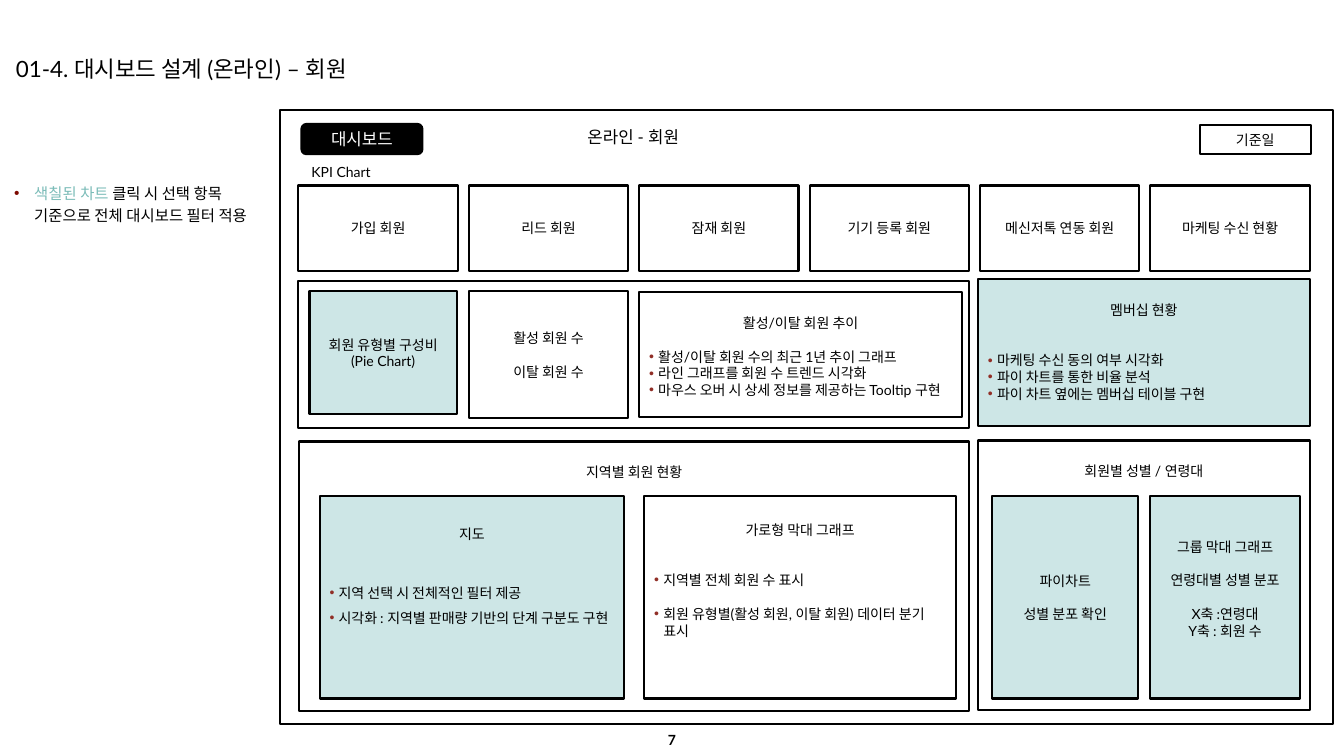
import pptx
import pptx.dml.color
import pptx.enum.shapes
import pptx.enum.text
import pptx.oxml.ns
import pptx.util
from lxml import etree

Inches = pptx.util.Inches
Pt = pptx.util.Pt
SHAPES = pptx.enum.shapes.MSO_SHAPE
ALIGN = pptx.enum.text.PP_ALIGN
ANCHOR = pptx.enum.text.MSO_ANCHOR
BLACK, WHITE, MINT, TEAL = "000000", "FFFFFF", "CDE6E6", "7BBCB8"
BULLET_RED, NOTE_RED = "912F27", "7D0900"
PANEL_TOP, PANEL_HEIGHT = 4.92, 2.01


def color(value):
    return pptx.dml.color.RGBColor.from_string(value)


def add_bullet(para, indent, tint):
    props = para._p.get_or_add_pPr()
    props.set("marL", str(Inches(indent)))
    props.set("indent", str(-Inches(indent)))
    qn = pptx.oxml.ns.qn
    holder = etree.SubElement(props, qn("a:buClr"))
    etree.SubElement(holder, qn("a:srgbClr"), val=tint)
    etree.SubElement(props, qn("a:buFont"), typeface="Arial")
    etree.SubElement(props, qn("a:buChar"), char="•")


def style(para, size=10, ink=BLACK, font="Lato", bold=False):
    para.font.size = Pt(size)
    para.font.name = font
    para.font.bold = bold
    para.font.color.rgb = color(ink)


def write(frame, lines, bulleted=False, spacing=None, size=10, ink=BLACK):
    for index, (text, gap) in enumerate(lines):
        para = frame.paragraphs[0] if index == 0 else frame.add_paragraph()
        para.text = text
        para.alignment = ALIGN.CENTER
        if gap:
            para.space_before = Pt(gap)
        if bulleted and index:
            para.alignment = ALIGN.LEFT
            if spacing:
                para.line_spacing = spacing
            add_bullet(para, 0.09, BULLET_RED)
        style(para, size, ink)


def add_box(page, place, lines=(), fill=WHITE, top=None, bulleted=False,
            spacing=None, size=10, ink=BLACK, kind=SHAPES.RECTANGLE):
    box = page.shapes.add_shape(kind, *map(Inches, place))
    box.shadow.inherit = False
    box.fill.solid()
    box.fill.fore_color.rgb = color(fill)
    box.line.color.rgb = color(BLACK)
    box.line.width = Pt(1.5)
    frame = box.text_frame
    frame.word_wrap = True
    frame.vertical_anchor = ANCHOR.MIDDLE if top is None else ANCHOR.TOP
    if top is not None:
        frame.margin_top = Inches(top)
    write(frame, lines, bulleted, spacing, size, ink)


def add_label(page, place, text, size, align=ALIGN.LEFT, bold=False):
    frame = page.shapes.add_textbox(*map(Inches, place)).text_frame
    frame.word_wrap = True
    para = frame.paragraphs[0]
    para.text = text
    para.alignment = align
    style(para, size, bold=bold)
    return frame


def add_note(page):
    frame = page.shapes.add_textbox(*map(Inches, (0.06, 1.42, 2.6, 1.46))).text_frame
    frame.word_wrap = True
    frame.margin_left = frame.margin_right = frame.margin_bottom = Inches(0.08)
    frame.margin_top = Inches(0.37)
    para = frame.paragraphs[0]
    para.line_spacing = 1.2
    para.space_after = Pt(6)
    add_bullet(para, 0.2, NOTE_RED)
    para.font.size = Pt(11)
    para.font.name = "Arial"
    for text, ink in (("색칠된 차트 ", TEAL),
                      ("클릭 시 선택 항목 기준으로 전체 대시보드 필터 적용", BLACK)):
        span = para.add_run()
        span.text = text
        span.font.color.rgb = color(ink)


def add_header(page):
    add_box(page, (2.99, 1.23, 1.2, 0.3), [("대시보드", 0)], BLACK,
            size=12, ink=WHITE, kind=SHAPES.ROUNDED_RECTANGLE)
    add_label(page, (4.94, 1.21, 2.68, 0.3), "온라인 - 회원", 12, ALIGN.CENTER)
    add_box(page, (11.9, 1.24, 1.1, 0.29), [("기준일", 0)])


def add_kpis(page):
    add_label(page, (2.99, 1.57, 2.68, 0.27), "KPI Chart", 10)
    names = ("가입 회원", "리드 회원", "잠재 회원", "기기 등록 회원",
             "메신저톡 연동 회원", "마케팅 수신 현황")
    for index, name in enumerate(names):
        add_box(page, (2.96 + 1.69 * index, 1.84, 1.58, 0.85), [(name, 0)])


def add_member_row(page):
    add_box(page, (2.96, 2.79, 6.65, 1.46))
    add_box(page, (3.07, 2.89, 1.46, 1.22),
            [("회원 유형별 구성비", 0), ("(Pie Chart)", 0)], MINT)
    add_box(page, (4.65, 2.89, 1.58, 1.26),
            [("활성 회원 수", 0), ("이탈 회원 수", 12)])
    add_box(page, (6.34, 2.9, 3.2, 1.24),
            [("활성/이탈 회원 추이", 0),
             ("활성/이탈 회원 수의 최근 1년 추이 그래프", 12),
             ("라인 그래프를 회원 수 트렌드 시각화", 0),
             ("마우스 오버 시 상세 정보를 제공하는 Tooltip 구현", 0)],
            top=0.22, bulleted=True)
    add_box(page, (9.7, 2.77, 3.29, 1.46),
            [("멤버십 현황", 0), ("마케팅 수신 동의 여부 시각화", 24),
             ("파이 차트를 통한 비율 분석", 0),
             ("파이 차트 옆에는 멤버십 테이블 구현", 0)],
            MINT, top=0.22, bulleted=True)


def add_panel(page, left, width, lines, fill=MINT, **options):
    add_box(page, (left, PANEL_TOP, width, PANEL_HEIGHT), lines, fill, **options)


def add_detail_row(page):
    add_box(page, (2.97, 4.38, 6.64, 2.67), [("지역별 회원 현황", 0)], top=0.22)
    add_box(page, (9.7, 4.37, 3.29, 2.67), [("회원별 성별 / 연령대", 0)], top=0.22)
    add_panel(page, 3.17, 3.02,
              [("지도", 0), ("지역 선택 시 전체적인 필터 제공", 24),
               ("시각화 : 지역별 판매량 기반의 단계 구분도 구현", 0)],
              top=0.29, bulleted=True, spacing=1.5)
    add_panel(page, 6.39, 3.09,
              [("가로형 막대 그래프", 0), ("지역별 전체 회원 수 표시", 24),
               ("회원 유형별(활성 회원, 이탈 회원) 데이터 분기 표시", 12)],
              WHITE, top=0.25, bulleted=True)
    add_panel(page, 9.84, 1.45, [("파이차트", 0), ("성별 분포 확인", 12)])
    add_panel(page, 11.41, 1.48,
              [("그룹 막대 그래프", 0), ("연령대별 성별 분포", 12),
               ("X축 :연령대", 12), ("Y축 : 회원 수", 0)], top=0.42)


def main():
    deck = pptx.Presentation()
    deck.slide_width, deck.slide_height = Inches(13.33), Inches(7.5)
    page = deck.slides.add_slide(deck.slide_layouts[6])
    add_label(page, (0.06, 0.5, 4.07, 0.48), "01-4. 대시보드 설계 (온라인) – 회원", 16)
    add_note(page)
    add_box(page, (2.78, 1.09, 10.44, 6.09))
    add_header(page)
    add_kpis(page)
    add_member_row(page)
    add_detail_row(page)
    number = add_label(page, (6.4, 7.23, 0.53, 0.23), "7", 10, ALIGN.CENTER, True)
    number.vertical_anchor = ANCHOR.MIDDLE
    deck.save("out.pptx")


if __name__ == "__main__":
    main()
